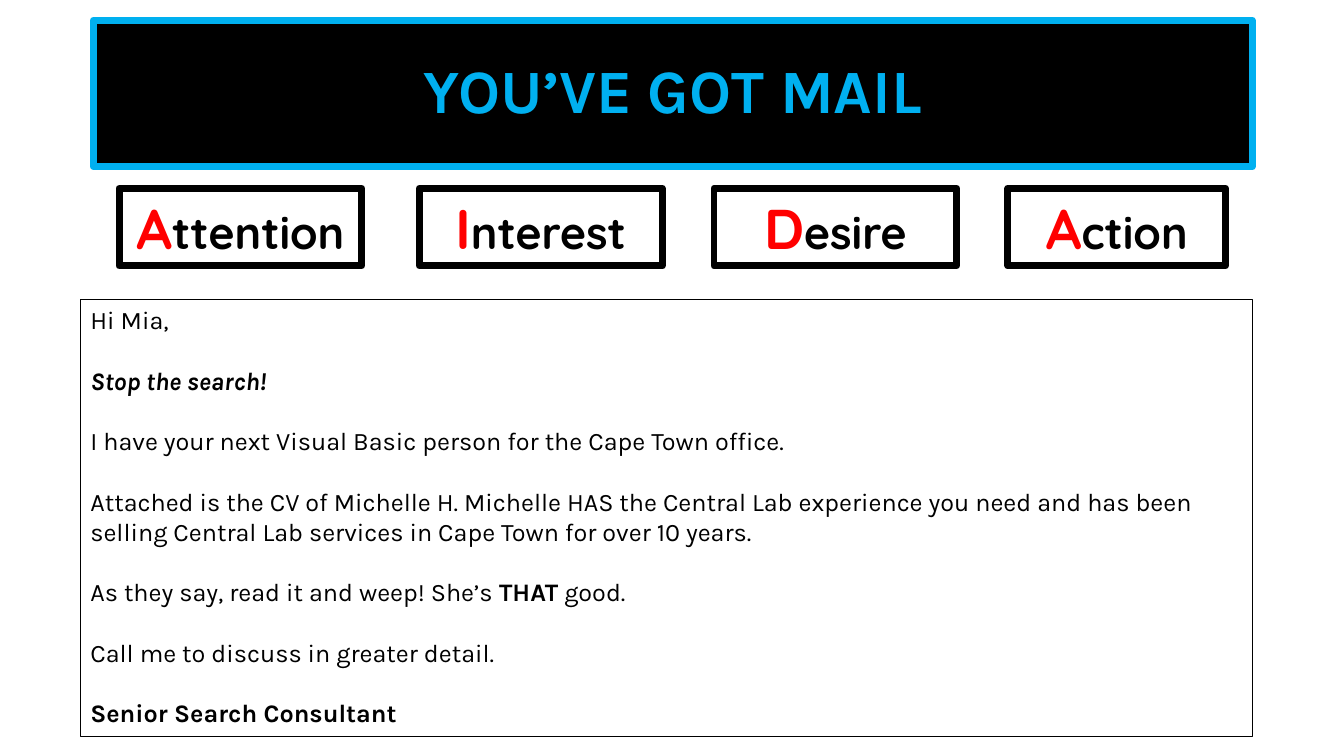
from pptx import Presentation
from pptx.util import Pt
from pptx.dml.color import RGBColor as RGB
from pptx.enum.shapes import MSO_SHAPE as SHAPE
from pptx.enum.text import MSO_ANCHOR as ANCHOR, PP_ALIGN as ALIGN

COLORS = {"black": "000000", "white": "FFFFFF", "blue": "00B0F0", "red": "FF0000"}

prs = Presentation()
prs.slide_width, prs.slide_height = Pt(960), Pt(540)
s = prs.slides.add_slide(prs.slide_layouts[6])


def add_box(left, top, width, height, fill, line, weight, anchor):
    sp = s.shapes.add_shape(SHAPE.RECTANGLE, Pt(left), Pt(top), Pt(width), Pt(height))
    sp.shadow.inherit = False
    if fill:
        sp.fill.solid()
        sp.fill.fore_color.rgb = RGB.from_string(COLORS[fill])
    else:
        sp.fill.background()
    sp.line.color.rgb = RGB.from_string(COLORS[line])
    sp.line.width = Pt(weight)
    tf = sp.text_frame
    tf.word_wrap = True
    tf.vertical_anchor = anchor
    return tf


def add_run(p, text, color, **formats):
    r = p.add_run()
    r.text = text
    r.font.color.rgb = RGB.from_string(COLORS[color])
    for name, value in formats.items():
        setattr(r.font, name, value)


# Title banner
tf = add_box(66.5, 14.5, 828, 104.5, "black", "blue", 5, ANCHOR.MIDDLE)
p = tf.paragraphs[0]
p.alignment = ALIGN.CENTER
p.line_spacing = 0.9
add_run(p, "YOU’VE GOT MAIL", "blue", name="Karla", size=Pt(44), bold=True)

# AIDA boxes
for word, left, width in [
    ("Attention", 85, 173.5),
    ("Interest", 299.5, 173.5),
    ("Desire", 510, 173.5),
    ("Action", 720, 155.5),
]:
    tf = add_box(left, 134.5, width, 55.5, None, "black", 5, ANCHOR.TOP)
    p = tf.paragraphs[0]
    p.alignment = ALIGN.CENTER
    add_run(p, word[0], "red", name="Quicksand", size=Pt(40), bold=True)
    add_run(p, word[1:], "black", name="Quicksand", size=Pt(32), bold=True)

# E-mail text: each paragraph is a list of (text, formats)
BOLD = {"bold": True}
email = [
    [("Hi Mia,", {})],
    [("Stop the search!", {"bold": True, "italic": True})],
    [("I have your next Visual Basic person for the Cape Town office.", {})],
    [("Attached is the CV of Michelle H. Michelle HAS the Central Lab experience you need "
      "and has been selling Central Lab services in Cape Town for over 10 years.", {})],
    [("As they say, read it and weep! She’s ", {}), ("THAT", BOLD), (" good.", {})],
    [("Call me to discuss in greater detail.", {})],
    [("Senior Search Consultant", BOLD)],
]
tf = add_box(57.5, 214, 837, 312, "white", "black", 1, ANCHOR.TOP)
for i, runs in enumerate(email):
    p = tf.add_paragraph() if i else tf.paragraphs[0]
    p.alignment = ALIGN.LEFT
    if i:
        p.space_before = Pt(21.6)
    for text, formats in runs:
        add_run(p, text, "black", name="Karla", size=Pt(18), **formats)

prs.save("out.pptx")
